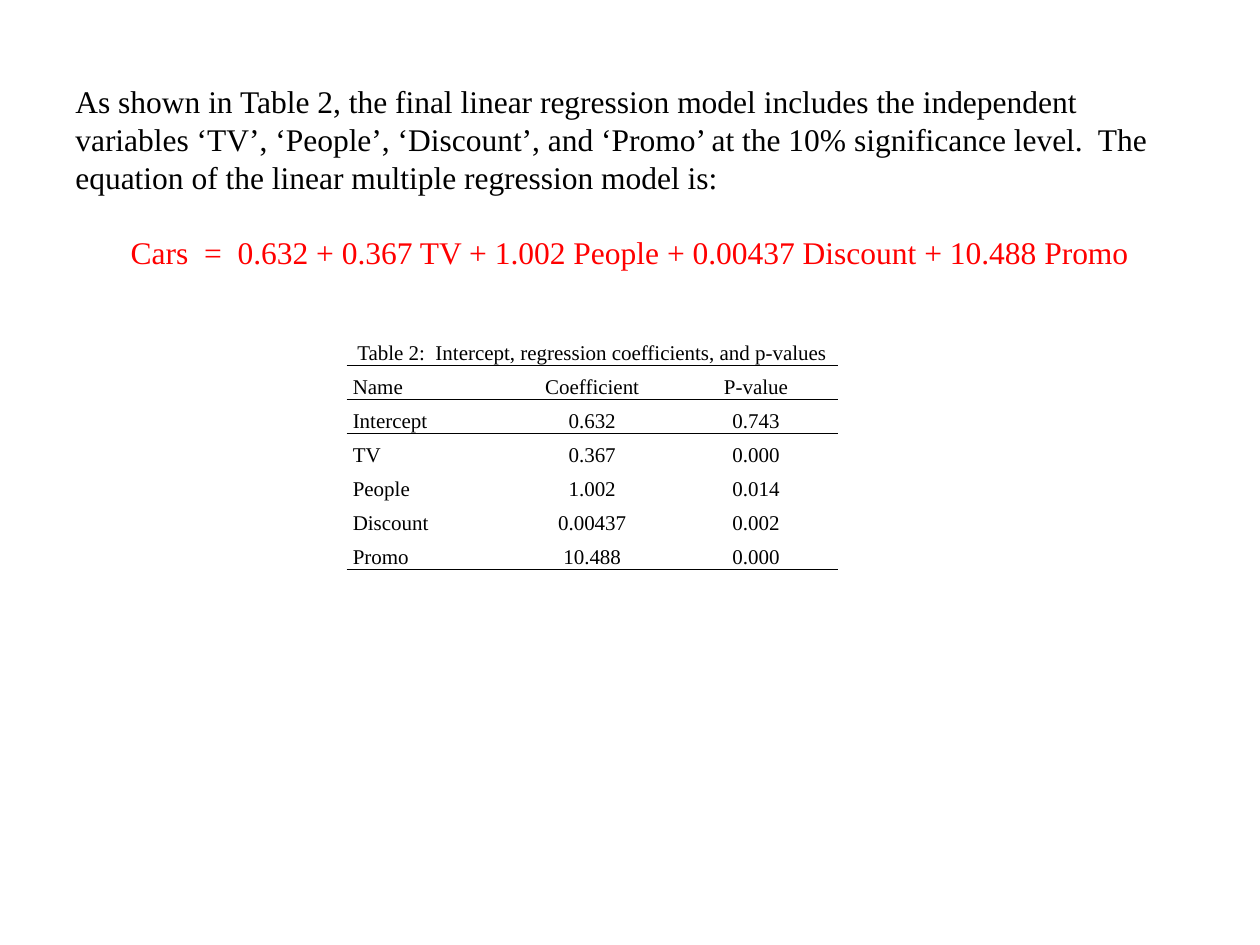
from dataclasses import dataclass

from lxml import etree
from pptx import Presentation
from pptx.dml.color import RGBColor
from pptx.enum.text import MSO_ANCHOR, MSO_AUTO_SIZE, PP_ALIGN
from pptx.oxml.ns import qn
from pptx.util import Inches, Pt

LEFT, CENTER = PP_ALIGN.LEFT, PP_ALIGN.CENTER
MIDDLE, BOTTOM = MSO_ANCHOR.MIDDLE, MSO_ANCHOR.BOTTOM
GROW = MSO_AUTO_SIZE.SHAPE_TO_FIT_TEXT
PLAIN_TABLE_STYLE = "{2D5ABB26-0587-4C30-8999-92F81FD0307C}"


@dataclass(frozen=True)
class Theme:
    font: str = "Times New Roman"
    ink: str = "000000"
    equation: str = "FF0000"
    body_size: int = 18
    table_size: int = 12
    rule_width: int = 1


THEME = Theme()

FINDING = (
    "As shown in Table 2, the final linear regression model includes the "
    "independent variables ‘TV’, ‘People’, ‘Discount’, and ‘Promo’ at the 10% "
    "significance level.  The equation of the linear multiple regression model is:"
)
EQUATION = "Cars  =  0.632 + 0.367 TV + 1.002 People + 0.00437 Discount + 10.488 Promo"
CAPTION = "Table 2:  Intercept, regression coefficients, and p-values"
COEFFICIENTS = [
    ("Name", "Coefficient", "P-value"),
    ("Intercept", "0.632", "0.743"),
    ("TV", "0.367", "0.000"),
    ("People", "1.002", "0.014"),
    ("Discount", "0.00437", "0.002"),
    ("Promo", "10.488", "0.000"),
]


def write(paragraph, text, size, color, align):
    paragraph.alignment = align
    run = paragraph.add_run()
    run.text = text
    run.font.name = THEME.font
    run.font.size = Pt(size)
    run.font.color.rgb = RGBColor.from_string(color)


def add_finding(slide):
    box = slide.shapes.add_textbox(Inches(0.5), Inches(0.59), Inches(9), Inches(1.62))
    frame = box.text_frame
    frame.word_wrap = True
    frame.auto_size = GROW
    frame.vertical_anchor = MIDDLE
    write(frame.paragraphs[0], FINDING, THEME.body_size, THEME.ink, LEFT)
    equation = frame.add_paragraph()
    equation.space_before = Pt(21)
    write(equation, EQUATION, THEME.body_size, THEME.equation, CENTER)


def add_rule(cell, side):
    rule = etree.SubElement(
        cell._tc.get_or_add_tcPr(), qn(f"a:ln{side}"), w=str(Pt(THEME.rule_width))
    )
    fill = etree.SubElement(rule, qn("a:solidFill"))
    etree.SubElement(fill, qn("a:srgbClr"), val=THEME.ink)


def format_cell(cell, left, right, rule_above, rule_below):
    cell.margin_left, cell.margin_right = Inches(left), Inches(right)
    cell.margin_top = cell.margin_bottom = 0
    cell.vertical_anchor = BOTTOM
    if rule_above:
        add_rule(cell, "T")
    if rule_below:
        add_rule(cell, "B")
    cell.fill.background()


def add_coefficients(slide):
    row_count, column_count = len(COEFFICIENTS) + 1, len(COEFFICIENTS[0])
    table = slide.shapes.add_table(
        row_count, column_count, Inches(2.75), Inches(2.5), Inches(3.9), Inches(2)
    ).table
    table.first_row = table.horz_banding = False
    table._tbl.tblPr.find(qn("a:tableStyleId")).text = PLAIN_TABLE_STYLE
    for row in table.rows:
        row.height = Inches(0.27)
    table.rows[0].height = Inches(0.4)

    caption = table.cell(0, 0)
    caption.merge(table.cell(0, column_count - 1))
    for column in range(column_count):
        format_cell(table.cell(0, column), 0.05, 0.05, False, True)
    caption_line = caption.text_frame.paragraphs[0]
    caption_line.line_spacing = 1.5
    write(caption_line, CAPTION, THEME.table_size, THEME.ink, CENTER)

    ruled_below = (0, 1, row_count - 1)
    for row, values in enumerate(COEFFICIENTS, start=1):
        for column, value in enumerate(values):
            cell = table.cell(row, column)
            inset, align = (0, CENTER) if column else (0.05, LEFT)
            format_cell(cell, inset, 0, row - 1 in ruled_below, row in ruled_below)
            write(cell.text_frame.paragraphs[0], value, THEME.table_size, THEME.ink, align)


def main():
    deck = Presentation()
    deck.slide_width, deck.slide_height = Inches(10), Inches(7.5)
    slide = deck.slides.add_slide(deck.slide_layouts[6])
    add_finding(slide)
    add_coefficients(slide)
    deck.save("out.pptx")


if __name__ == "__main__":
    main()
